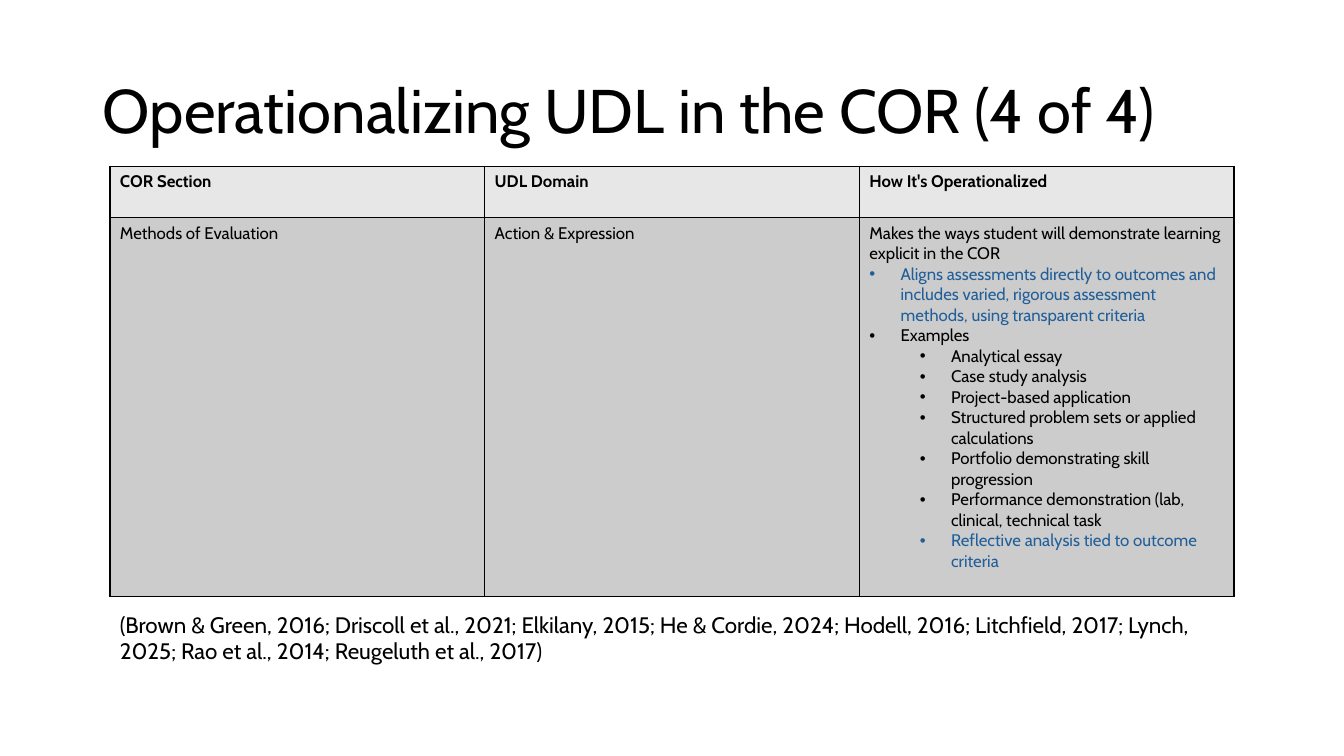
from lxml import etree
from pptx import Presentation
from pptx.dml.color import RGBColor
from pptx.enum import text
from pptx.oxml import ns
from pptx.util import Inches, Pt

BLACK, BLUE = "000000", "215F9A"
TITLE = "Operationalizing UDL in the COR (4 of 4)"
HEADERS = ["COR Section", "UDL Domain", "How It's Operationalized"]
SECTION, DOMAIN = "Methods of Evaluation", "Action & Expression"
PRACTICES = [
    (0, BLACK, "Makes the ways student will demonstrate learning explicit in the COR"),
    (1, BLUE, "Aligns assessments directly to outcomes and includes varied, rigorous "
              "assessment methods, using transparent criteria"),
    (1, BLACK, "Examples"),
    (2, BLACK, "Analytical essay"),
    (2, BLACK, "Case study analysis"),
    (2, BLACK, "Project-based application"),
    (2, BLACK, "Structured problem sets or applied calculations"),
    (2, BLACK, "Portfolio demonstrating skill progression"),
    (2, BLACK, "Performance demonstration (lab, clinical, technical task"),
    (2, BLUE, "Reflective analysis tied to outcome criteria"),
]
CITATIONS = ("(Brown & Green, 2016; Driscoll et al., 2021; Elkilany, 2015; "
             "He & Cordie, 2024; Hodell, 2016; Litchfield, 2017; Lynch, 2025; "
             "Rao et al., 2014; Reugeluth et al., 2017)")
ROWS = [
    (0.51, "E7E7E7", True, [[(0, BLACK, h)] for h in HEADERS]),
    (3.76, "CCCCCC", False, [[(0, BLACK, SECTION)], [(0, BLACK, DOMAIN)], PRACTICES]),
]
LEFT, TABLE_TOP, WIDTH = 1.09, 1.65, 11.15
INDENTS = {1: 0.31, 2: 0.81}
HANGING = 0.31


def rgb(value):
    return RGBColor.from_string(value)


def add_run(p, words, size, color=BLACK, bold=False):
    r = p.add_run()
    r.text = words
    for name, value in {"name": "Cabin", "size": Pt(size), "bold": bold}.items():
        setattr(r.font, name, value)
    r.font.color.rgb = rgb(color)


def add_bullet(p, level):
    p.level = level - 1
    pPr = p._p.get_or_add_pPr()
    pPr.set("marL", str(Inches(INDENTS[level])))
    pPr.set("indent", str(-Inches(HANGING)))
    etree.SubElement(pPr, ns.qn("a:buFont")).set("typeface", "Arial")
    etree.SubElement(pPr, ns.qn("a:buChar")).set("char", "•")


def add_borders(cell):
    tcPr = cell._tc.get_or_add_tcPr()
    for i, side in enumerate(["lnL", "lnR", "lnT", "lnB"]):
        ln = etree.Element(ns.qn("a:" + side), w=str(Pt(1)))
        fill = etree.SubElement(ln, ns.qn("a:solidFill"))
        etree.SubElement(fill, ns.qn("a:srgbClr")).set("val", BLACK)
        tcPr.insert(i, ln)


def fill_cell(cell, lines, color, bold):
    cell.fill.solid()
    cell.fill.fore_color.rgb = rgb(color)
    add_borders(cell)
    tf = cell.text_frame
    for i, (level, ink, words) in enumerate(lines):
        p = tf.add_paragraph() if i else tf.paragraphs[0]
        if level:
            add_bullet(p, level)
        add_run(p, words, 12, ink, bold)


def add_title(s):
    sp = s.shapes.title
    box = {"left": 0.92, "top": 0.4, "width": 11.5, "height": 1.45}
    for name, value in box.items():
        setattr(sp, name, Inches(value))
    tf = sp.text_frame
    frame = {"word_wrap": True, "auto_size": text.MSO_AUTO_SIZE.NONE,
             "vertical_anchor": text.MSO_ANCHOR.MIDDLE}
    for name, value in frame.items():
        setattr(tf, name, value)
    p = tf.paragraphs[0]
    p.alignment = text.PP_ALIGN.LEFT
    p.line_spacing = 0.9
    add_run(p, TITLE, 44)


def add_cor_table(s):
    height = sum(row[0] for row in ROWS)
    table = s.shapes.add_table(len(ROWS), len(HEADERS), Inches(LEFT), Inches(TABLE_TOP),
                               Inches(WIDTH), Inches(height)).table
    table.first_row = table.horz_banding = False
    for i, (row_height, color, bold, cells) in enumerate(ROWS):
        table.rows[i].height = Inches(row_height)
        for j, lines in enumerate(cells):
            fill_cell(table.cell(i, j), lines, color, bold)


def add_citations(s):
    sp = s.shapes.add_textbox(Inches(LEFT), Inches(6.01), Inches(WIDTH), Inches(0.64))
    tf = sp.text_frame
    tf.word_wrap = True
    tf.auto_size = text.MSO_AUTO_SIZE.SHAPE_TO_FIT_TEXT
    add_run(tf.paragraphs[0], CITATIONS, 16)


def main():
    prs = Presentation()
    prs.slide_width, prs.slide_height = Inches(13.33), Inches(7.5)
    s = prs.slides.add_slide(prs.slide_layouts[5])
    add_title(s)
    add_cor_table(s)
    add_citations(s)
    prs.save("out.pptx")


if __name__ == "__main__":
    main()
